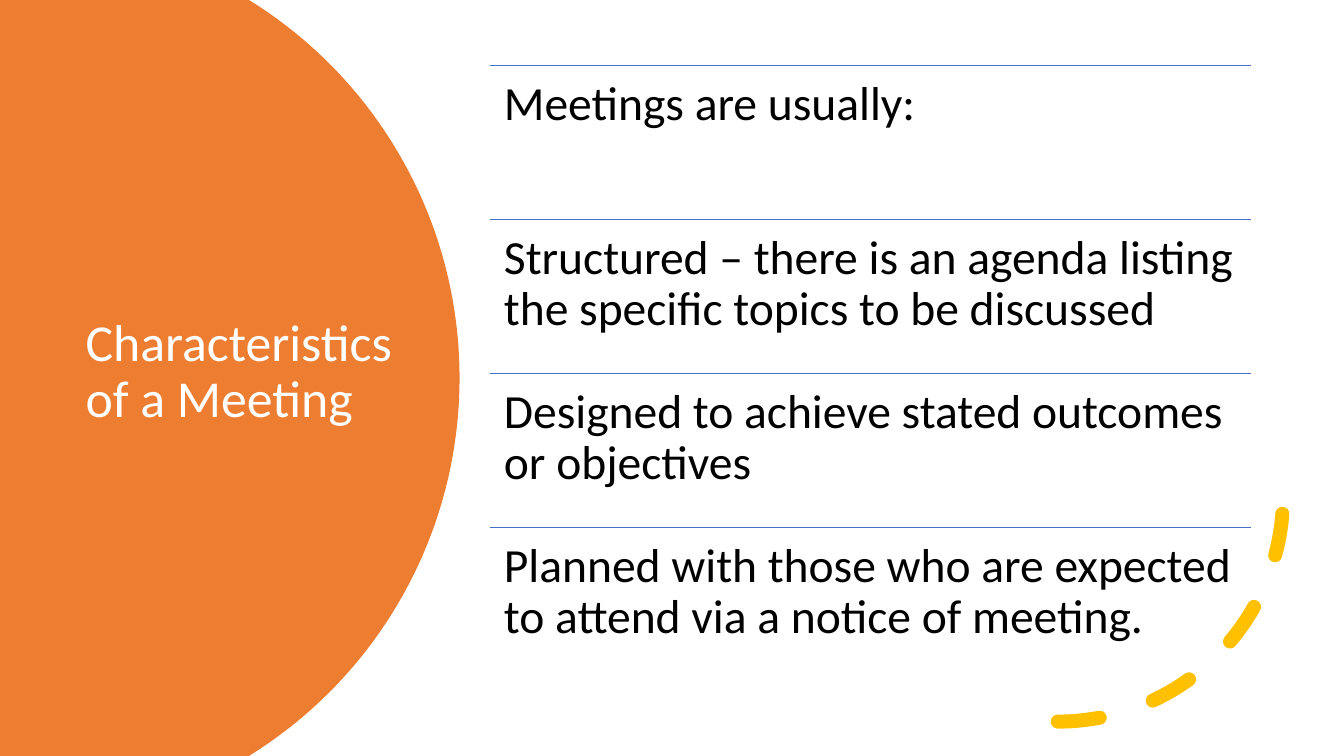
from math import asin, cos, sin

from lxml import etree
from pptx import Presentation
from pptx.dml.color import RGBColor
from pptx.enum.dml import MSO_LINE
from pptx.enum.shapes import MSO_CONNECTOR, MSO_SHAPE
from pptx.enum.text import MSO_ANCHOR, MSO_AUTO_SIZE, PP_ALIGN
from pptx.oxml.ns import qn
from pptx.util import Pt

DASH = MSO_LINE.DASH
ARC = MSO_SHAPE.ARC
STRAIGHT = MSO_CONNECTOR.STRAIGHT
TOP, MIDDLE = MSO_ANCHOR.TOP, MSO_ANCHOR.MIDDLE
LEFT = PP_ALIGN.LEFT
FIXED = MSO_AUTO_SIZE.NONE

WIDE, HIGH = 960, 540
ORANGE, GOLD, BLUE = "ED7D31", "FFC000", "4472C4"
WHITE, BLACK = "FFFFFF", "000000"

POINTS = (
    "Meetings are usually:",
    "Structured – there is an agenda listing the specific topics to be discussed",
    "Designed to achieve stated outcomes or objectives",
    "Planned with those who are expected to attend via a notice of meeting.",
)


def paint(fill, shade):
    fill.solid()
    fill.fore_color.rgb = RGBColor.from_string(shade)


class Page:
    font = "Calibri"

    def __init__(self, slide):
        self.slide = slide
        self.shapes = slide.shapes
        paint(slide.background.fill, WHITE)

    def label(self, shape, text, size, shade, anchor, inset, after=0):
        frame = shape.text_frame
        frame.word_wrap = True
        frame.auto_size = FIXED
        frame.vertical_anchor = anchor
        frame.margin_left = frame.margin_right = Pt(inset[0])
        frame.margin_top = frame.margin_bottom = Pt(inset[1])
        para = frame.paragraphs[0]
        para.alignment = LEFT
        para.line_spacing = 0.9
        para.space_before, para.space_after = Pt(0), Pt(after)
        run = para.add_run()
        run.text = text
        run.font.name, run.font.size = self.font, Pt(size)
        paint(run.font.fill, shade)

    def title(self, text, x, y, w, h):
        shape = self.shapes.title
        shape.left, shape.top, shape.width, shape.height = map(Pt, (x, y, w, h))
        self.label(shape, text, 37, WHITE, MIDDLE, (7.2, 3.6))
        # Bring the title in front of the disc
        self.shapes._spTree.append(shape._element)

    def text(self, text, x, y, w, h):
        box = self.shapes.add_textbox(Pt(x), Pt(y), Pt(w), Pt(h))
        self.label(box, text, 34, BLACK, TOP, (10, 10), 12)

    def rule(self, x, y, w):
        line = self.shapes.add_connector(STRAIGHT, Pt(x), Pt(y), Pt(x + w), Pt(y))
        paint(line.line.fill, BLUE)
        line.line.width = Pt(1)
        etree.SubElement(line._element.spPr, qn("a:effectLst"))

    def disc(self, x, y, radius, steps=80):
        # Right part of a circle, cut off by the slide edges
        limit = asin(y / radius)
        turns = [limit * (2 * i / steps - 1) for i in range(steps + 1)]
        edge = [(Pt(x + radius * cos(t)), Pt(y + radius * sin(t))) for t in turns]
        pen = self.shapes.build_freeform(0, 0)
        pen.add_line_segments(edge + [(0, Pt(HIGH))], close=True)
        shape = pen.convert_to_shape()
        shape.shadow.inherit = False
        paint(shape.fill, ORANGE)
        shape.line.fill.background()

    def arc(self, x, y, size):
        # Dashed quarter circle, turned to the lower right
        shape = self.shapes.add_shape(ARC, Pt(x), Pt(y), Pt(size), Pt(size))
        shape.shadow.inherit = False
        shape.fill.background()
        paint(shape.line.fill, GOLD)
        shape.line.width = Pt(10)
        shape.line.dash_style = DASH
        props = shape._element.spPr
        props.find(qn("a:xfrm")).set("flipV", "1")
        props.find(qn("a:ln")).set("cap", "rnd")


def main():
    deck = Presentation()
    deck.slide_width, deck.slide_height = Pt(WIDE), Pt(HIGH)
    page = Page(deck.slides.add_slide(deck.slide_layouts[5]))

    # Title side
    page.disc(10.8, HIGH / 2, 317.5)
    page.title("Characteristics of a Meeting", 54, 91, 252, 351)

    # Accent
    page.arc(594.7, 193.7, 321.8)

    # Ruled list
    left, top, width, step = 350, 46.6, 543.8, 110
    for i, point in enumerate(POINTS):
        y = top + i * step
        page.rule(left, y, width)
        page.text(point, left, y, width, step)

    deck.save("out.pptx")


if __name__ == "__main__":
    main()
